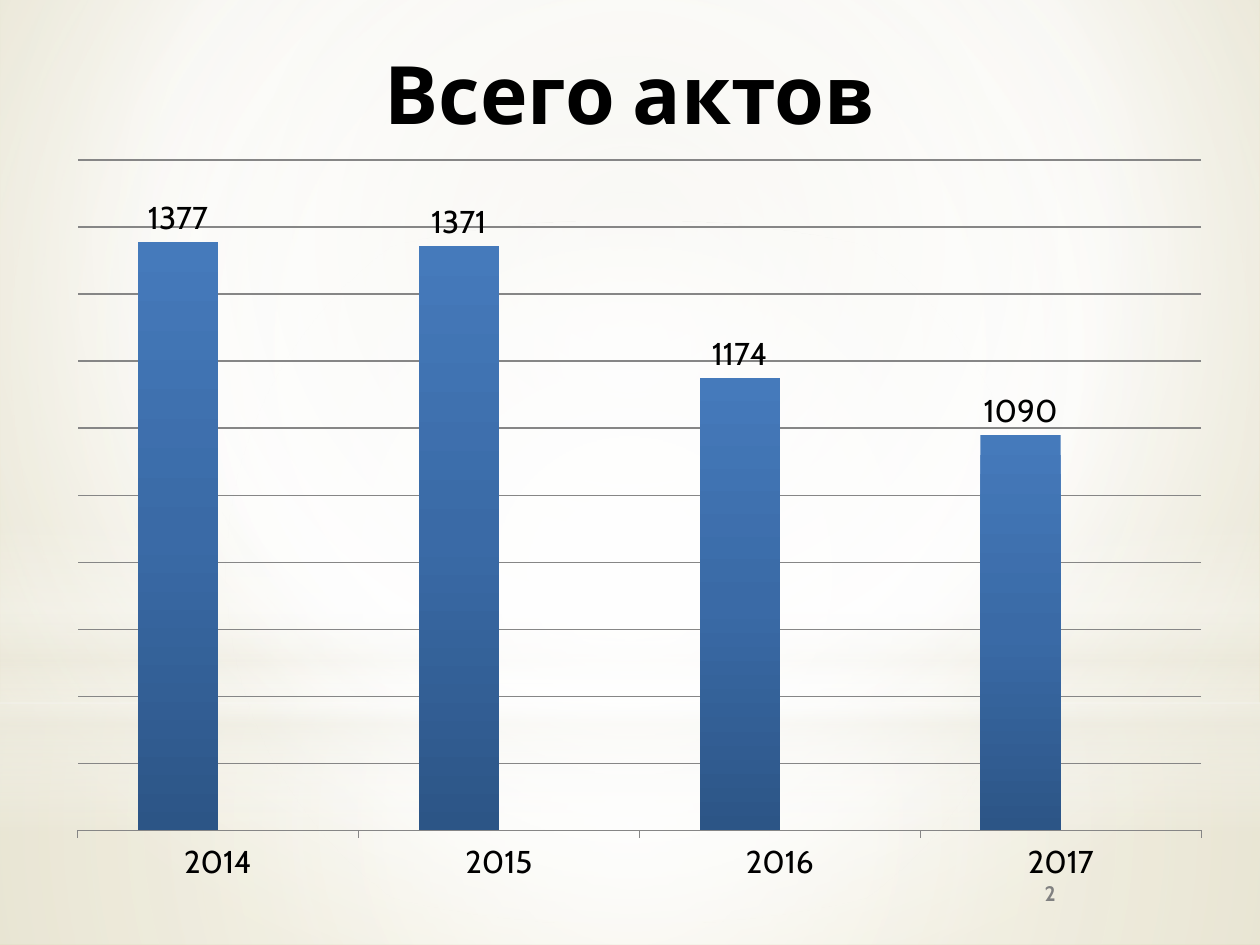
from lxml.etree import SubElement as Sub
from pptx import Presentation
from pptx.chart.data import CategoryChartData as Data
from pptx.dml.color import RGBColor as RGB
from pptx.enum.chart import XL_CHART_TYPE as Kind, XL_LABEL_POSITION as Spot
from pptx.enum.chart import XL_TICK_MARK as Tick
from pptx.enum.shapes import MSO_SHAPE as Form
from pptx.enum.text import MSO_ANCHOR as Anchor, PP_ALIGN as Align
from pptx.oxml.ns import qn
from pptx.util import Inches, Pt

HUE = {"white": "FFFFFF", "cream": "EEECE1", "sand": "E7E4D4", "tan": "D5CC9F",
       "black": "000000", "gray": "808080", "grid": "868686",
       "sky": "457ABB", "mid": "3A6AA6", "navy": "2C5586",
       "red": "C0504D", "green": "9BBB59", "plum": "8064A2", "aqua": "4BACC6"}
FONT = "Cabin"
MID = (50, 50, 50, 50)


def write(frame, text, size, hue, anchor):
    frame.word_wrap = True
    frame.vertical_anchor = anchor
    para = frame.paragraphs[0]
    para.alignment = Align.CENTER
    run = para.add_run()
    run.text = text
    font = run.font
    font.name, font.size, font.bold = FONT, Pt(size), True
    font.color.rgb = RGB.from_string(HUE[hue])


def fade(fill, root, stops, box=None):
    """Stops are (place, colour, opacity) in percent; no box means top to bottom."""
    fill.gradient()
    grad = next(root.iter(qn("a:gradFill")))
    for part in list(grad):
        grad.remove(part)
    row = Sub(grad, qn("a:gsLst"))
    for pos, hue, alpha in stops:
        stop = Sub(row, qn("a:gs"), pos=str(pos * 1000))
        tint = Sub(stop, qn("a:srgbClr"), val=HUE[hue])
        if alpha < 100:
            Sub(tint, qn("a:alpha"), val=str(alpha * 1000))
    if box:
        way = Sub(grad, qn("a:path"), path="circle")
        Sub(way, qn("a:fillToRect"), {k: str(v * 1000) for k, v in zip("ltrb", box)})
    else:
        Sub(grad, qn("a:lin"), ang="5400000", scaled="0")


deck = Presentation()
deck.slide_width, deck.slide_height = Inches(10), Inches(7.5)
slide = deck.slides.add_slide(deck.slide_layouts[5])
shapes = slide.shapes

# Background and its soft layers
fade(slide.background.fill, slide._element,
     [(0, "sand", 100), (60, "white", 100), (100, "tan", 100)], (20, 10, 20, 60))
layers = [
    (Form.RECTANGLE, 5.58, 1.92, MID,
     [(0, "white", 91), (37, "white", 76), (100, "cream", 79)]),
    (Form.RECTANGLE, 0, 5.58, MID,
     [(0, "white", 89), (48, "white", 62), (100, "cream", 79)]),
    (Form.RECTANGLE, 4.12, 2.5, None,
     [(0, "white", 0), (29, "white", 30), (45, "cream", 40),
      (55, "white", 26), (65, "cream", 60), (100, "white", 0)]),
    (Form.OVAL, 1.75, 5.58, MID, [(0, "white", 100), (56, "white", 0)]),
]
for form, top, high, box, stops in layers:
    layer = shapes.add_shape(form, 0, Inches(top), deck.slide_width, Inches(high))
    layer.shadow.inherit = False
    layer.line.fill.background()
    fade(layer.fill, layer._element, stops, box)

# Title, brought in front of the layers
title = shapes.title
shapes._spTree.append(title._element)
title.left, title.top, title.width, title.height = map(Inches, (0.5, 0.3, 9, 1.25))
write(title.text_frame, "Всего актов", size=46, hue="black", anchor=Anchor.TOP)

# Column chart
data = Data()
data.categories = ["2014", "2015", "2016", "2017"]
data.add_series("Series 1", (1377, 1371, 1174, 1090))
data.add_series("Series 2", (None,) * 4)
for num in range(3, 6):
    data.add_series(f"Series {num}", ())
chart = shapes.add_chart(Kind.COLUMN_CLUSTERED, Inches(0.43), Inches(1.15),
                         Inches(9.29), Inches(5.98), data).chart
chart.has_legend = chart.has_title = False
chart.font.name, chart.font.size = FONT, Pt(18)
chart.font.color.rgb = RGB.from_string(HUE["black"])

plot = chart.plots[0]
plot.gap_width, plot.overlap, plot.vary_by_categories = 150, 0, False
acts, *rest = plot.series
fade(acts.format.fill, acts._element,
     [(0, "sky", 100), (50, "mid", 100), (100, "navy", 100)])
for ser, hue in zip(rest, ("red", "green", "plum", "aqua")):
    ser.format.fill.solid()
    ser.format.fill.fore_color.rgb = RGB.from_string(HUE[hue])
tags = acts.data_labels
tags.show_value, tags.position = True, Spot.OUTSIDE_END

# Axes
years, scale = chart.category_axis, chart.value_axis
years.major_tick_mark = Tick.OUTSIDE
scale.minimum_scale, scale.maximum_scale, scale.major_unit = 500, 1500, 100
scale.has_major_gridlines, scale.visible = True, False
for part in (years, scale.major_gridlines):
    part.format.line.width = Pt(0.75)
    part.format.line.color.rgb = RGB.from_string(HUE["grid"])

# Plot area as shares of the chart
area = chart._chartSpace.chart.plotArea
for old in area.findall(qn("c:layout")):
    area.remove(old)
frame = Sub(area, qn("c:layout"))
area.insert(0, frame)
spot = Sub(frame, qn("c:manualLayout"))
for tag, val in (("layoutTarget", "inner"), ("xMode", "edge"), ("yMode", "edge"),
                 ("x", "0.02"), ("y", "0.02"), ("w", "0.96"), ("h", "0.89")):
    Sub(spot, qn("c:" + tag), val=val)

# Page number
page = shapes.add_textbox(*map(Inches, (7.17, 6.83, 2.33, 0.52)))
write(page.text_frame, "2", size=12, hue="gray", anchor=Anchor.MIDDLE)

deck.save("out.pptx")
